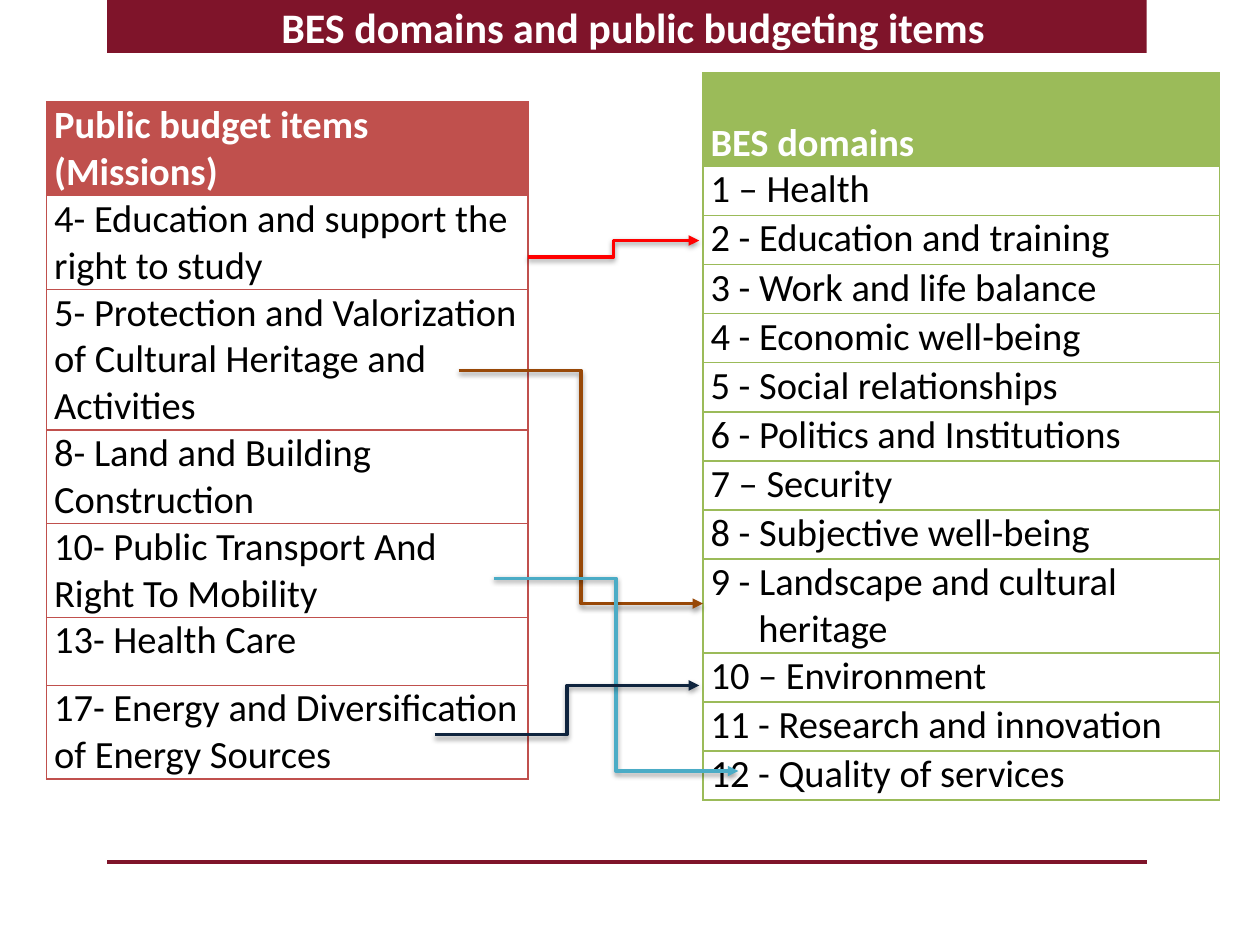
from dataclasses import dataclass

from lxml.etree import SubElement
from pptx import Presentation
from pptx.dml.color import RGBColor
from pptx.enum.shapes import MSO_CONNECTOR, MSO_SHAPE
from pptx.enum.text import MSO_ANCHOR, MSO_AUTO_SIZE, PP_ALIGN
from pptx.oxml import parse_xml
from pptx.oxml.ns import nsdecls, qn
from pptx.util import Inches, Pt


@dataclass(frozen=True)
class Theme:
    font: str = "Calibri"
    title_size: int = 24
    table_size: int = 22
    wine: str = "7F142A"
    missions: str = "C0504D"
    domains: str = "9BBB59"
    education: str = "FF0000"
    culture: str = "984807"
    transport: str = "4BACC6"
    energy: str = "0F243E"
    light: str = "FFFFFF"
    dark: str = "000000"


MISSIONS = [
    ("Public budget items (Missions)", 0.74),
    ("4- Education and support the right to study", 0.74),
    ("5- Protection and Valorization of Cultural Heritage and Activities", 1.11),
    ("8- Land and Building Construction", 0.74),
    ("10- Public Transport And Right To Mobility", 0.74),
    ("13- Health Care", 0.54),
    ("17- Energy and Diversification of Energy Sources", 0.74),
]
DOMAINS = [
    ("BES domains", 0.74),
    ("1 – Health", 0.39),
    ("2 - Education and training", 0.39),
    ("3 - Work and life balance", 0.39),
    ("4 - Economic well-being", 0.39),
    ("5 - Social relationships", 0.39),
    ("6 - Politics and Institutions", 0.39),
    ("7 – Security", 0.39),
    ("8 - Subjective well-being", 0.39),
    ("9 - Landscape and cultural heritage", 0.74),
    ("10 – Environment", 0.39),
    ("11 - Research and innovation", 0.39),
    ("12 - Quality of services", 0.39),
]


def write(tf, text, *, font, size, color, bold=False, align=None, spacing=None, hanging=0):
    p = tf.paragraphs[0]
    if hanging:
        pPr = p._p.get_or_add_pPr()
        pPr.set("marL", str(Inches(hanging)))
        pPr.set("indent", str(-Inches(hanging)))
    p.alignment, p.line_spacing = align, spacing
    r = p.add_run()
    r.text = text
    r.font.name, r.font.size, r.font.bold = font, Pt(size), bold
    r.font.color.rgb = RGBColor.from_string(color)


def add_borders(cell, color):
    tcPr = cell._tc.get_or_add_tcPr()
    for i, side in enumerate(("lnL", "lnR", "lnT", "lnB")):
        tcPr.insert(i, parse_xml(
            f'<a:{side} {nsdecls("a")} w="{Pt(1)}"><a:solidFill>'
            f'<a:srgbClr val="{color}"/></a:solidFill></a:{side}>'))


class SlideBuilder:
    def __init__(self, prs, theme):
        self.theme = theme
        self.slide = prs.slides.add_slide(prs.slide_layouts[5])
        self.shapes = self.slide.shapes

    def bar(self, x, y, w, h, color):
        sp = self.shapes.add_shape(MSO_SHAPE.RECTANGLE, Inches(x), Inches(y), Inches(w), Inches(h))
        sp.shadow.inherit = False
        sp.fill.solid()
        sp.fill.fore_color.rgb = RGBColor.from_string(color)
        sp.line.fill.background()

    def title(self, text, x, y, w, h):
        """Fill the title placeholder and bring it in front of what is already drawn."""
        sp = self.shapes.title
        sp.left, sp.top, sp.width, sp.height = (Inches(v) for v in (x, y, w, h))
        tf = sp.text_frame
        tf.word_wrap, tf.auto_size = True, MSO_AUTO_SIZE.NONE
        tf.vertical_anchor = MSO_ANCHOR.TOP
        write(tf, text, font=self.theme.font, size=self.theme.title_size,
              color=self.theme.light, bold=True, align=PP_ALIGN.CENTER, spacing=0.85)
        self.shapes._spTree.append(sp._element)

    def table(self, rows, x, y, w, color, header_anchor, hanging=0):
        height = sum(h for _, h in rows)
        table = self.shapes.add_table(
            len(rows), 1, Inches(x), Inches(y), Inches(w), Inches(height)).table
        table.first_row = table.horz_banding = False
        for i, (text, h) in enumerate(rows):
            header = i == 0
            table.rows[i].height = Inches(h)
            cell = table.cell(i, 0)
            cell.margin_left = cell.margin_right = Inches(0.06)
            cell.margin_top = cell.margin_bottom = 0
            cell.vertical_anchor = header_anchor if header else MSO_ANCHOR.TOP
            if header:
                cell.fill.solid()
                cell.fill.fore_color.rgb = RGBColor.from_string(color)
            else:
                cell.fill.background()
            add_borders(cell, color)
            write(cell.text_frame, text, font=self.theme.font, size=self.theme.table_size,
                  color=self.theme.light if header else self.theme.dark,
                  bold=header, hanging=0 if header else hanging)

    def line(self, start, end, color, kind=MSO_CONNECTOR.STRAIGHT):
        """Draw a plain connector without effects and return it."""
        cxn = self.shapes.add_connector(kind, *(Inches(v) for v in (*start, *end)))
        cxn.line.width = Pt(2)
        cxn.line.color.rgb = RGBColor.from_string(color)
        SubElement(cxn._element.spPr, qn("a:effectLst"))
        return cxn

    def arrow(self, start, end, color):
        """Draw an elbow arrow with a soft shadow below it."""
        cxn = self.line(start, end, color, MSO_CONNECTOR.ELBOW)
        spPr = cxn._element.spPr
        SubElement(spPr.find(qn("a:ln")), qn("a:tailEnd"), type="triangle")
        spPr.find(qn("a:effectLst")).append(parse_xml(
            f'<a:outerShdw {nsdecls("a")} blurRad="{Pt(3.1)}" dist="{Pt(1.6)}" dir="5400000" '
            f'rotWithShape="0"><a:srgbClr val="{self.theme.dark}"><a:alpha val="38000"/>'
            '</a:srgbClr></a:outerShdw>'))


def main():
    prs = Presentation()
    prs.slide_width, prs.slide_height = Inches(10), Inches(7.5)
    theme = Theme()
    s = SlideBuilder(prs, theme)

    s.bar(0.85, 0, 8.25, 0.42, theme.wine)
    s.line((0.85, 6.84), (9.1, 6.84), theme.wine)
    s.table(MISSIONS, 0.37, 0.81, 3.82, theme.missions, MSO_ANCHOR.MIDDLE)
    s.title("BES domains and public budgeting items", 0.9, 0.02, 8.25, 1.59)
    s.table(DOMAINS, 5.58, 0.58, 4.1, theme.domains, MSO_ANCHOR.BOTTOM, hanging=0.38)

    s.arrow((4.19, 2.04), (5.55, 1.91), theme.education)
    s.arrow((3.64, 2.94), (5.58, 4.79), theme.culture)
    s.arrow((3.92, 4.59), (5.86, 6.12), theme.transport)
    s.arrow((3.45, 5.83), (5.55, 5.44), theme.energy)

    prs.save("out.pptx")


if __name__ == "__main__":
    main()
